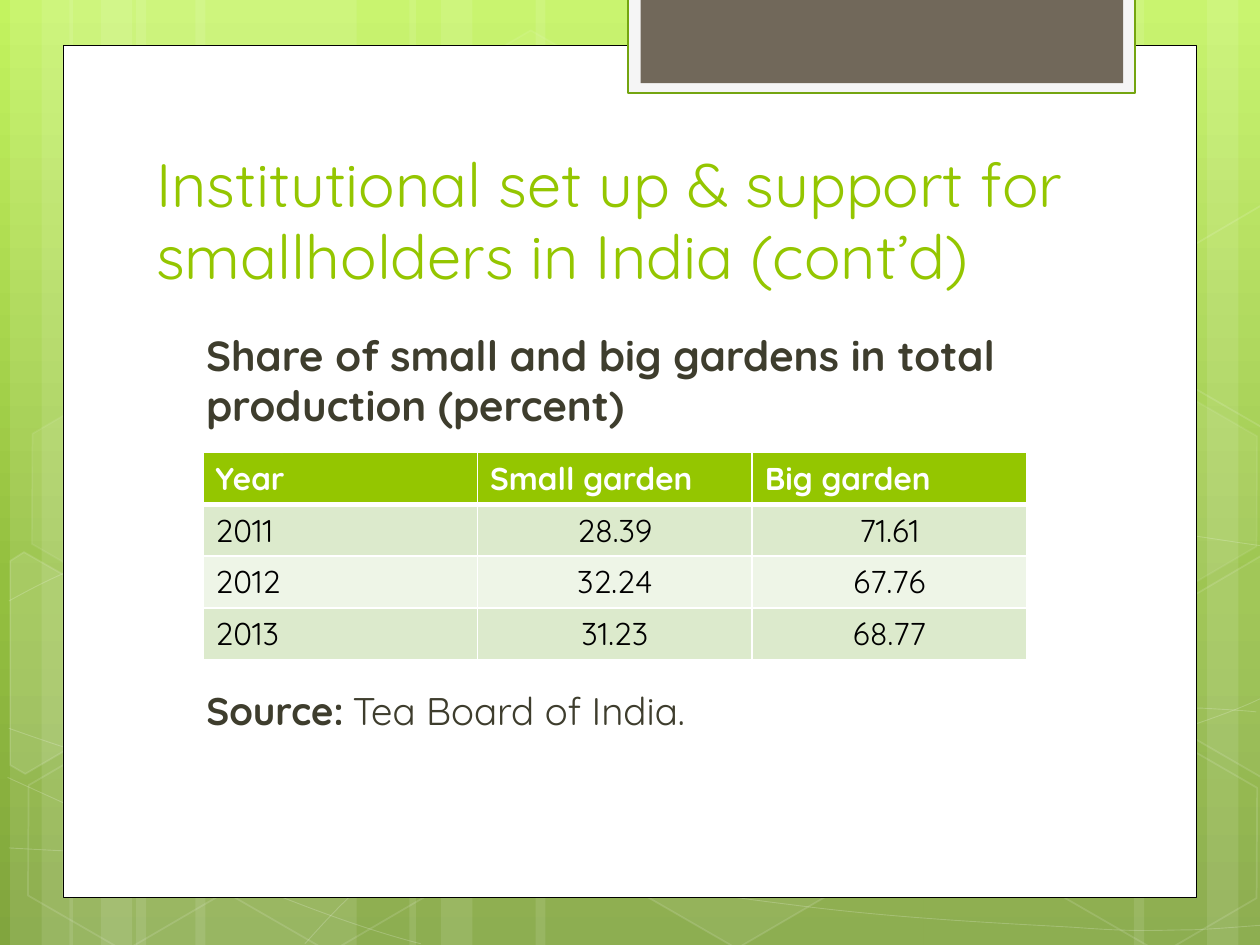
from copy import deepcopy
from math import cos, radians, sin

from lxml import etree
from pptx import Presentation
from pptx.dml.color import RGBColor
from pptx.enum.shapes import MSO_SHAPE
from pptx.enum.text import MSO_ANCHOR, PP_ALIGN
from pptx.oxml.ns import qn
from pptx.util import Inches, Pt

RECT, HEX = MSO_SHAPE.RECTANGLE, MSO_SHAPE.HEXAGON
BOTTOM, TOP = MSO_ANCHOR.BOTTOM, MSO_ANCHOR.TOP
LEFT, CENTER = PP_ALIGN.LEFT, PP_ALIGN.CENTER

# The slide is a grid of 100 columns by 75 rows
COLS, ROWS = 100, 75
CELL = Inches(0.1)
TILT = 30
FONT = "Quicksand"
WHITE, BLACK, GREEN, DARK = "FFFFFF", "000000", "94C600", "3E3D2D"

# Left column and width of each full-height stripe
STRIPES = [
    (10.8, 17.5), (0.8, 5), (3.3, 8.3), (15.5, 17.5), (5.5, 5), (8, 8.3),
    (73.3, 17.5), (95.8, 5), (90, 8.3), (42.5, 30.8), (32.5, 5), (35, 8.3),
]
# Each curve: a start point, then three points per Bezier piece
CURVES = [
    [(0.7, 67.3), (6.1, 67.6), (11.5, 67.9), (19, 67.8), (26.5, 67.7),
     (35.8, 67.5), (45.8, 66.5), (55.8, 65.5), (70, 63.6), (79.2, 61.7),
     (88.3, 59.8), (97.7, 56.8), (100.7, 55.1)],
    [(0.7, 47.7), (3.6, 46.1), (6.5, 44.6), (12.1, 43.1), (17.8, 41.6),
     (25.9, 39.4), (34.7, 38.7), (43.6, 38), (54.4, 37.9), (65.4, 38.7),
     (76.4, 39.5), (94.7, 42.6), (100.7, 43.4)],
    [(0.6, 61.7), (12.7, 67.2), (24.7, 72.7), (33.4, 74.9)],
    [(0.7, 57.8), (3.8, 58.9), (7, 60), (12.8, 61.6), (18.6, 63.1),
     (27.3, 65.6), (35.7, 67.3), (44, 69), (54.5, 70.8), (62.8, 71.8),
     (71.1, 72.9), (80, 73.3), (85.3, 73.6), (90.5, 74), (91.9, 73.8),
     (94.5, 73.8), (97.1, 73.7), (98.9, 73.5), (100.7, 73.4)],
    [(24.2, 74.9), (26, 72.9), (27.8, 70.9), (30.2, 69.1), (32.6, 67.3),
     (36, 65.3), (38.8, 63.9), (41.6, 62.5), (43.3, 61.9), (47, 60.9),
     (50.6, 59.9), (57.3, 58.5), (60.8, 57.8), (64.4, 57.1), (64.9, 57.1),
     (68, 56.9), (71.1, 56.6), (76, 56.3), (79.4, 56.2), (82.9, 56.1),
     (88.6, 56.2), (88.6, 56.2), (90.8, 56.2), (93.1, 56.2), (95.3, 56.2),
     (97.1, 56.3), (98.8, 56.4), (99.7, 56.5)],
]
# Left, top, fill alpha, line alpha
HEXES = [
    (33.4, 3.6, 4, 8), (49.7, 58.9, 6, 12), (1.1, 59.1, 0, 12),
    (1.4, 31.2, 7, 8), (17.4, 59.2, 0, 12), (75.3, 45.3, 10, 12),
    (83.4, 59.3, 0, 12), (83.4, 31.4, 7, 8),
]
# Hexagons cut by the slide's edge: centre, outline and fill alpha
RIGHT = [(92.6, 48.5), (100.1, 44.1), (100.9, 44.6), (100.9, 61.3),
         (100.2, 61.7), (92.6, 57.3)]
CUTS = [
    ((3.6, 53.5), [(0.8, 44.5), (1.9, 43.8), (9.6, 48.2), (9.5, 57),
                   (2, 61.4), (0.8, 60.7)], 10),
    ((98.5, 52), RIGHT, 4),
    ((98.5, 24.2), [(x, y - 27.8) for x, y in RIGHT], 0),
]
TABLE = [
    ("Year", "Small garden", "Big garden"),
    ("2011", "28.39", "71.61"),
    ("2012", "32.24", "67.76"),
    ("2013", "31.23", "68.77"),
]


def grid(*nums):
    return [round(n * CELL) for n in nums]


def color(code):
    return RGBColor.from_string(code)


def fade(paint, alpha):
    etree.SubElement(paint[0], qn("a:alpha")).set("val", str(alpha * 1000))


def style(shape, fill=None, alpha=100, line=None, width=1, sheer=100):
    shape.shadow.inherit = False
    props = shape._element.spPr
    if fill and alpha:
        shape.fill.solid()
        shape.fill.fore_color.rgb = color(fill)
        if alpha < 100:
            fade(props.find(qn("a:solidFill")), alpha)
    else:
        shape.fill.background()
    if line:
        shape.line.color.rgb = color(line)
        shape.line.width = Pt(width)
        if sheer < 100:
            fade(props.find(qn("a:ln")).find(qn("a:solidFill")), sheer)
    else:
        shape.line.fill.background()


def box(slide, at, kind=RECT, **look):
    shape = slide.shapes.add_shape(kind, *grid(*at))
    style(shape, **look)
    return shape


def outline(slide, points, close, **look):
    spots = [grid(*p) for p in points]
    pen = slide.shapes.build_freeform(*spots[0])
    pen.add_line_segments(spots[1:], close=close)
    shape = pen.convert_to_shape()
    style(shape, **look)
    return shape


def bend(shape):
    """Turn each three line segments into one cubic Bezier piece."""
    legs = list(shape._element.iter(qn("a:lnTo")))
    for i in range(0, len(legs), 3):
        curve = etree.Element(qn("a:cubicBezTo"))
        legs[i].addprevious(curve)
        for leg in legs[i:i + 3]:
            curve.append(leg[0])
            leg.getparent().remove(leg)


def untilt(center, points):
    cx, cy = center
    c, s = cos(radians(TILT)), sin(radians(TILT))
    return [(cx + (x - cx) * c + (y - cy) * s,
             cy - (x - cx) * s + (y - cy) * c) for x, y in points]


def ink(font, size, code, bold=False):
    font.name, font.size, font.bold = FONT, Pt(size), bold
    font.color.rgb = color(code)


def label(slide, at, code, runs, anchor=TOP):
    frame = slide.shapes.add_textbox(*grid(*at)).text_frame
    frame.word_wrap = True
    frame.vertical_anchor = anchor
    para = frame.paragraphs[0]
    for text, size, bold in runs:
        run = para.add_run()
        run.text = text
        ink(run.font, size, code, bold)
    return para


def backdrop(slide):
    fill = slide.background.fill
    fill.gradient()
    stops = slide._element.find(".//" + qn("a:gsLst"))
    stops.insert(1, deepcopy(stops[0]))
    shades = [("C3F35F", 0), ("93BF3F", 0.62), ("81A53E", 1)]
    for stop, (code, place) in zip(fill.gradient_stops, shades):
        stop.color.rgb = color(code)
        stop.position = place
    fill.gradient_angle = 270

    for left, width in STRIPES:
        box(slide, (left, 0, width, ROWS), fill=WHITE, alpha=10)
    for curve in CURVES:
        bend(outline(slide, curve, False, line=WHITE, width=0.5, sheer=20))
    for left, top, alpha, sheer in HEXES:
        cell = box(slide, (left, top, 17.5, 15.2), HEX, fill=WHITE,
                   alpha=alpha, line=WHITE, sheer=sheer)
        cell.adjustments[0] = 0.285
        cell.rotation = TILT
    for center, points, alpha in CUTS:
        outline(slide, untilt(center, points), True, fill=WHITE, alpha=alpha,
                line=WHITE, sheer=12).rotation = TILT


def border(cell, sides):
    props = cell._tc.get_or_add_tcPr()
    for i, (side, width) in enumerate(sides.items()):
        line = etree.Element(qn("a:ln" + side), w=str(Pt(width)))
        paint = etree.SubElement(line, qn("a:solidFill"))
        etree.SubElement(paint, qn("a:srgbClr"), val=WHITE)
        props.insert(i, line)


def shares(slide):
    area = grid(16.1, 35.9, 65.4, 16.48)
    table = slide.shapes.add_table(len(TABLE), len(TABLE[0]), *area).table
    for r, row in enumerate(TABLE):
        for c, text in enumerate(row):
            cell = table.cell(r, c)
            cell.text = text
            cell.fill.solid()
            shade = GREEN if r == 0 else "DCEACC" if r % 2 else "EEF5E7"
            cell.fill.fore_color.rgb = color(shade)
            border(cell, {"L": 1, "R": 1, "T": 3 if r == 1 else 1,
                          "B": 3 if r == 0 else 1})
            para = cell.text_frame.paragraphs[0]
            para.alignment = CENTER if r and c else LEFT
            ink(para.font, 18, BLACK if r else WHITE, r == 0)


def main():
    deck = Presentation()
    deck.slide_width, deck.slide_height = grid(COLS, ROWS)
    slide = deck.slides.add_slide(deck.slide_layouts[6])
    backdrop(slide)

    # White page with the tab at its top
    box(slide, (5, 3.6, 90, 67.65), fill=WHITE, line=BLACK, width=0.5)
    box(slide, (49.85, -0.2, 40.2, 7.6), fill="F5F5F5", line="74A510",
        width=1.25)
    box(slide, (50.85, -0.2, 38.3, 6.8), fill="71685A")

    # Title, table heading, table and source
    title = "Institutional set up & support for smallholders in India (cont’d)"
    label(slide, (11.4, 11.3, 76.8, 12.5), GREEN, [(title, 35, False)],
          BOTTOM).line_spacing = 0.98
    head = "Share of small and big gardens in total production (percent)"
    label(slide, (15.37, 25.65, 66.1, 9.1), DARK, [(head, 24, True)])
    shares(slide)
    source = label(slide, (11.4, 54, 46.2, 4.7), DARK,
                   [("Source:", 22, True), (" ", 18, False),
                    ("Tea Board of India.", 22, False)])
    source._p.get_or_add_pPr().set("marL", str(4 * CELL))
    deck.save("out.pptx")


if __name__ == "__main__":
    main()
